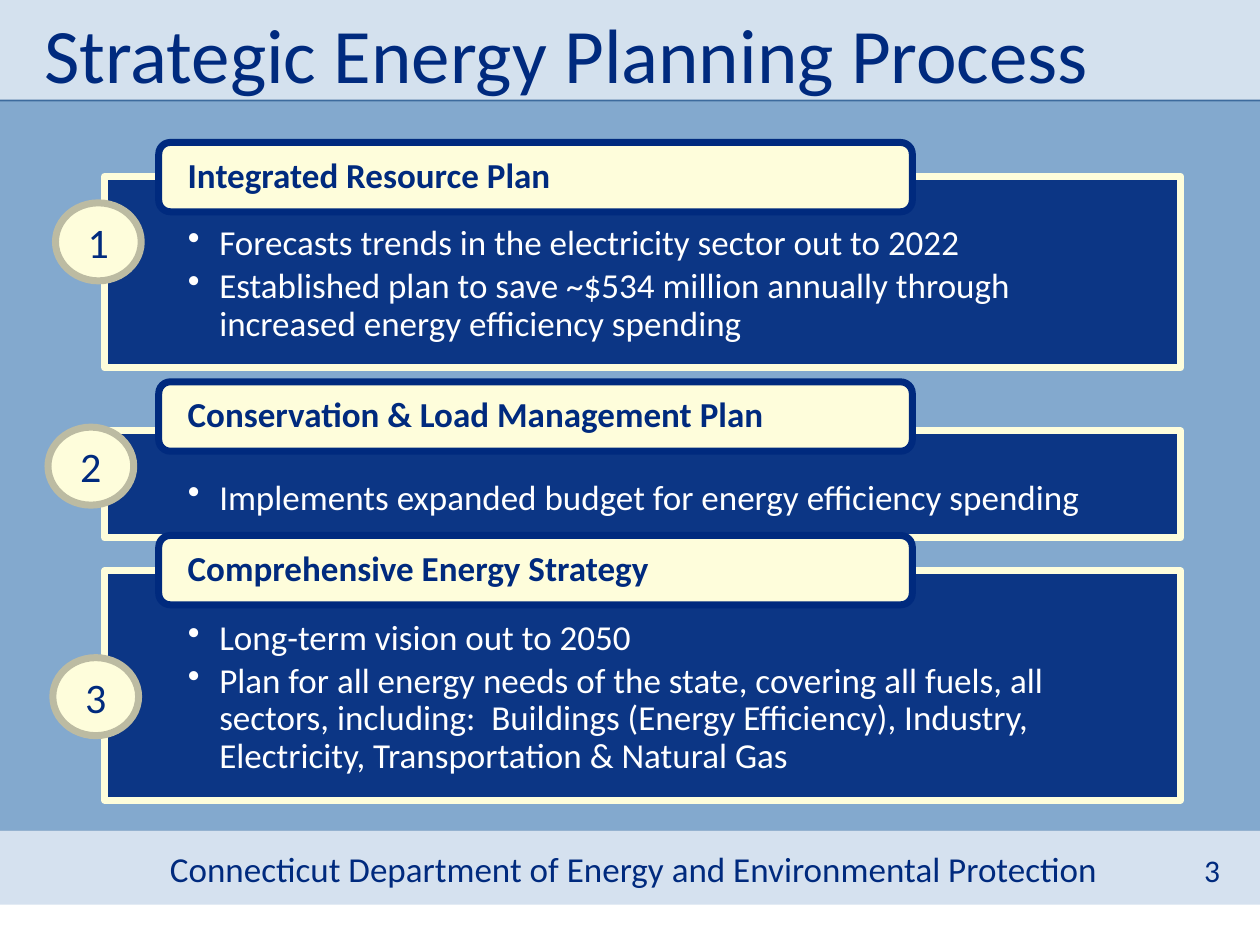
from dataclasses import dataclass

from lxml import etree
from pptx import Presentation
from pptx.dml.color import RGBColor
from pptx.enum.shapes import MSO_SHAPE
from pptx.enum.text import MSO_ANCHOR, PP_ALIGN
from pptx.oxml.ns import qn
from pptx.util import Pt

RECT, ROUND, OVAL = MSO_SHAPE.RECTANGLE, MSO_SHAPE.ROUNDED_RECTANGLE, MSO_SHAPE.OVAL
TOP, MIDDLE = MSO_ANCHOR.TOP, MSO_ANCHOR.MIDDLE
LEFT, CENTER = PP_ALIGN.LEFT, PP_ALIGN.CENTER


@dataclass(frozen=True)
class Theme:
    """Colours, type sizes and line width of the slide."""
    font: str = "Calibri"
    navy: str = "002A7E"
    cream: str = "FEFDDB"
    khaki: str = "BCBBA2"
    white: str = "FFFFFF"
    header: str = "D4E1EE"
    footer: str = "D5E1EF"
    body: str = "83A9CE"
    backdrop: str = "3D6B9D"
    title_size: int = 44
    badge_size: int = 24
    text_size: int = 20
    number_size: int = 18
    border: int = 4


T = Theme()
WIDTH, HEIGHT = 720, 540
PANEL_X, PANEL_W = 59.8, 614.9
TAB_X, TAB_W, TAB_H = 90.7, 430.6, 39.6
BADGE_W, BADGE_H = 49, 44.6
SECTIONS = [
    ("Integrated Resource Plan",
     ["Forecasts trends in the electricity sector out to 2022",
      "Established plan to save ~$534 million annually through increased energy efficiency spending"],
     (100.8, 109.4), 81.4, (31.7, 115.9)),
    ("Conservation & Load Management Plan",
     ["Implements expanded budget for energy efficiency spending"],
     (246.2, 61.2), 218.2, (27.4, 244.1)),
    ("Comprehensive Energy Strategy",
     ["Long-term vision out to 2050",
      "Plan for all energy needs of the state, covering all fuels, all sectors, including:  "
      "Buildings (Energy Efficiency), Industry, Electricity, Transportation & Natural Gas"],
     (326.2, 131), 306, (30.2, 375.8)),
]


def rgb(value):
    """Turn a hex string into a colour."""
    return RGBColor.from_string(value)


def add_box(s, kind, box, fill, line=None):
    """Add a flat filled shape, outlined when a line colour is given."""
    sp = s.shapes.add_shape(kind, *map(Pt, box))
    sp.shadow.inherit = False
    sp.fill.solid()
    sp.fill.fore_color.rgb = rgb(fill)
    if line:
        sp.line.color.rgb = rgb(line)
        sp.line.width = Pt(T.border)
    else:
        sp.line.fill.background()
    return sp


def write(sp, lines, size, color, insets=(7.2, 3.6, 7.2, 3.6), anchor=TOP,
          align=LEFT, bold=False, spacing=None, bullets=False):
    """Fill a shape with formatted paragraphs."""
    tf = sp.text_frame
    tf.word_wrap = True
    tf.vertical_anchor = anchor
    tf.margin_left, tf.margin_top, tf.margin_right, tf.margin_bottom = map(Pt, insets)
    tf.text = "\n".join(lines)
    for p in tf.paragraphs:
        p.alignment = align
        if spacing:
            p.line_spacing = spacing
        if bullets:
            p.space_after = Pt(3)
            pPr = p._p.get_or_add_pPr()
            pPr.set("marL", str(Pt(18)))
            pPr.set("indent", str(-Pt(18)))
            etree.SubElement(pPr, qn("a:buChar")).set("char", "•")
        for r in p.runs:
            r.font.name = T.font
            r.font.size = Pt(size)
            r.font.bold = bold
            r.font.color.rgb = rgb(color)


def add_label(s, box, text, size, align=LEFT):
    """Add a navy text box."""
    write(s.shapes.add_textbox(*map(Pt, box)), [text], size, T.navy, align=align)


def add_frame(s):
    """Lay out the background bands, title, footer and page number."""
    s.background.fill.solid()
    s.background.fill.fore_color.rgb = rgb(T.backdrop)
    for top, height, fill in [(510, 30, T.white), (0, 57, T.header),
                              (474.5, 42.5, T.footer), (58, 416.5, T.body)]:
        add_box(s, RECT, (0, top, WIDTH, height), fill)
    add_label(s, (0, 0, 648, 90), "Strategic Energy Planning Process", T.title_size, CENTER)
    add_label(s, (90, 481, 620, 31.5),
              "Connecticut Department of Energy and Environmental Protection", T.text_size)
    add_label(s, (681, 483, 39, 29), "3", T.number_size)


def add_panel(s, box, bullets):
    """Add a translucent navy panel holding bullets."""
    sp = add_box(s, RECT, box, T.navy, T.cream)
    color = sp._element.spPr.find(qn("a:solidFill"))[0]
    etree.SubElement(color, qn("a:alpha")).set("val", "90000")
    write(sp, bullets, T.text_size, T.white, (47.5, 28, 47.5, 11.5), spacing=0.9, bullets=True)


def add_tab(s, box, heading):
    """Add the rounded heading tab of a panel."""
    sp = add_box(s, ROUND, box, T.cream, T.navy)
    write(sp, [heading], T.text_size, T.navy, (14.6, 0, 14.6, 0), MIDDLE, bold=True, spacing=0.9)


def add_badge(s, box, number):
    """Add the round number badge of a panel."""
    sp = add_box(s, OVAL, box, T.cream, T.khaki)
    write(sp, [str(number)], T.badge_size, T.navy, (0, 0, 0, 0), MIDDLE, CENTER)


def main():
    """Build and save the slide."""
    prs = Presentation()
    prs.slide_width, prs.slide_height = Pt(WIDTH), Pt(HEIGHT)
    s = prs.slides.add_slide(prs.slide_layouts[6])
    add_frame(s)
    for number, (heading, bullets, (top, height), tab_top, badge) in enumerate(SECTIONS, 1):
        add_panel(s, (PANEL_X, top, PANEL_W, height), bullets)
        add_tab(s, (TAB_X, tab_top, TAB_W, TAB_H), heading)
        add_badge(s, (*badge, BADGE_W, BADGE_H), number)
    prs.save("out.pptx")


if __name__ == "__main__":
    main()
